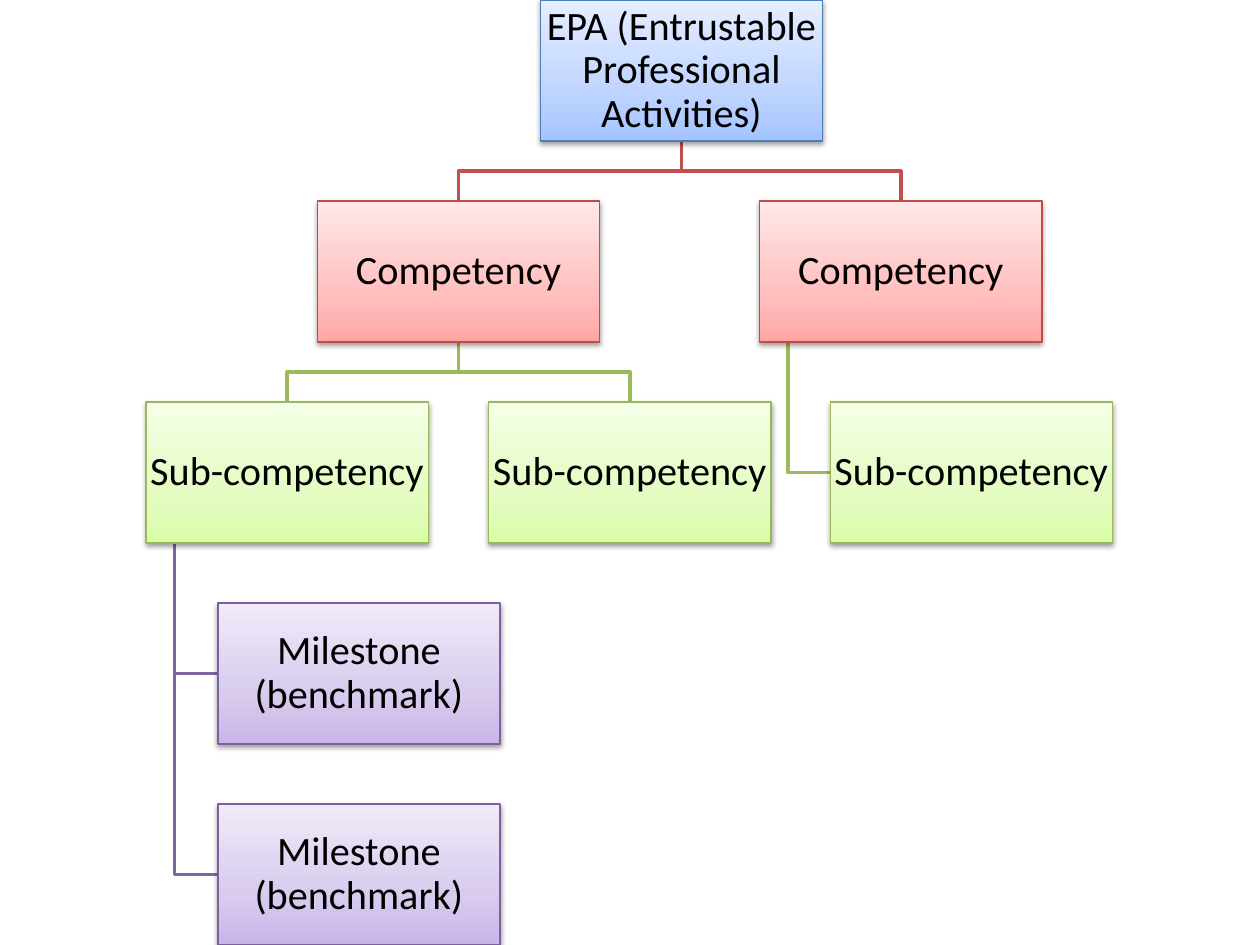
from collections import namedtuple

from lxml import etree
from pptx import Presentation
from pptx import util as u
from pptx.dml.color import RGBColor
from pptx.enum import shapes, text
from pptx.oxml import ns

SLIDE_WIDTH, SLIDE_HEIGHT = 10, 7.5
BOX_WIDTH, BOX_HEIGHT = 2.24, 1.12
ROW_STEP = (SLIDE_HEIGHT - BOX_HEIGHT) / 4  # five rows fill the slide height
HANG_INSET = BOX_WIDTH / 10

BLACK = RGBColor(0x00, 0x00, 0x00)

# Per level: gradient from bottom to top, border, and line to the parent
Level = namedtuple("Level", "gradient border link")
EPA = Level(
    [RGBColor(0xA4, 0xC4, 0xFF), RGBColor(0xBF, 0xD4, 0xFF), RGBColor(0xE6, 0xEE, 0xFF)],
    RGBColor(0x4B, 0x7E, 0xBC), None)
COMPETENCY = Level(
    [RGBColor(0xFF, 0xA6, 0xA5), RGBColor(0xFF, 0xC0, 0xBF), RGBColor(0xFF, 0xE7, 0xE7)],
    RGBColor(0xBF, 0x4C, 0x48), RGBColor(0xC0, 0x50, 0x4D))
SUB_COMPETENCY = Level(
    [RGBColor(0xDA, 0xFD, 0xA7), RGBColor(0xE4, 0xFC, 0xC2), RGBColor(0xF5, 0xFF, 0xE7)],
    RGBColor(0x98, 0xB9, 0x55), RGBColor(0x9B, 0xBB, 0x59))
MILESTONE = Level(
    [RGBColor(0xC9, 0xB5, 0xE8), RGBColor(0xD8, 0xCB, 0xEE), RGBColor(0xF0, 0xEA, 0xF9)],
    RGBColor(0x7D, 0x60, 0xA0), RGBColor(0x80, 0x64, 0xA2))

# Node: label, level, left edge, row, index of parent, hanging from its left side
Node = namedtuple("Node", "label level left row parent hangs")
NODES = [
    Node("EPA (Entrustable Professional Activities)", EPA, 4.29, 0, None, False),
    Node("Competency", COMPETENCY, 2.52, 1, 0, False),
    Node("Sub-competency", SUB_COMPETENCY, 1.16, 2, 1, False),
    Node("Milestone (benchmark)", MILESTONE, 1.73, 3, 2, True),
    Node("Milestone (benchmark)", MILESTONE, 1.73, 4, 2, True),
    Node("Sub-competency", SUB_COMPETENCY, 3.88, 2, 1, False),
    Node("Competency", COMPETENCY, 6.03, 1, 0, False),
    Node("Sub-competency", SUB_COMPETENCY, 6.59, 2, 6, True),
]


def add_child(parent, tag, **attributes):
    return etree.SubElement(parent, ns.qn(tag), attributes)


def set_gradient(box, colors):
    box.fill.gradient()
    box.fill.gradient_angle = 90
    stops = box._element.spPr.find(ns.qn("a:gradFill")).find(ns.qn("a:gsLst"))
    for stop in list(stops):
        stops.remove(stop)
    for percent, color in zip((0, 35, 100), colors):
        stop = add_child(stops, "a:gs", pos=str(percent * 1000))
        add_child(stop, "a:srgbClr", val=str(color))


def set_shadow(box):
    box.shadow.inherit = False
    effects = box._element.spPr.find(ns.qn("a:effectLst"))
    shadow = add_child(effects, "a:outerShdw", blurRad=str(u.Pt(3.1)),
                       dist=str(u.Pt(1.6)), dir="5400000", rotWithShape="0")
    color = add_child(shadow, "a:srgbClr", val=str(BLACK))
    add_child(color, "a:alpha", val="38000")


def add_node(group, node):
    box = group.shapes.add_shape(
        shapes.MSO_SHAPE.RECTANGLE, u.Inches(node.left), u.Inches(node.row * ROW_STEP),
        u.Inches(BOX_WIDTH), u.Inches(BOX_HEIGHT))
    set_gradient(box, node.level.gradient)
    box.line.color.rgb = node.level.border
    box.line.width = u.Pt(0.75)
    set_shadow(box)

    frame = box.text_frame
    frame.word_wrap = True
    frame.vertical_anchor = text.MSO_ANCHOR.MIDDLE
    frame.margin_left = frame.margin_right = u.Inches(0.02)
    frame.margin_top = frame.margin_bottom = u.Inches(0.02)
    para = frame.paragraphs[0]
    para.alignment = text.PP_ALIGN.CENTER
    para.line_spacing = 0.9
    para.space_after = u.Pt(8)
    span = para.add_run()
    span.text = node.label
    span.font.name = "Calibri"
    span.font.size = u.Pt(23)
    span.font.color.rgb = BLACK


def link_points(parent, node):
    bottom = parent.row * ROW_STEP + BOX_HEIGHT
    top = node.row * ROW_STEP
    if node.hangs:
        x = parent.left + HANG_INSET
        middle = top + BOX_HEIGHT / 2
        return [(x, bottom), (x, middle), (node.left, middle)]
    start, end = parent.left + BOX_WIDTH / 2, node.left + BOX_WIDTH / 2
    middle = (bottom + top) / 2
    return [(start, bottom), (start, middle), (end, middle), (end, top)]


def add_link(group, parent, node):
    points = [(u.Inches(x), u.Inches(y)) for x, y in link_points(parent, node)]
    builder = group.shapes.build_freeform(*points[0])
    builder.add_line_segments(points[1:], close=False)
    link = builder.convert_to_shape()
    link.fill.background()
    link.line.color.rgb = node.level.link
    link.line.width = u.Pt(2)
    link.shadow.inherit = False


def main():
    deck = Presentation()
    deck.slide_width = u.Inches(SLIDE_WIDTH)
    deck.slide_height = u.Inches(SLIDE_HEIGHT)
    page = deck.slides.add_slide(deck.slide_layouts[6])
    group = page.shapes.add_group_shape()

    # Links lie behind the boxes
    for node in reversed(NODES):
        if node.parent is not None:
            add_link(group, NODES[node.parent], node)

    # Boxes of the hierarchy
    for node in NODES:
        add_node(group, node)

    deck.save("out.pptx")


if __name__ == "__main__":
    main()
